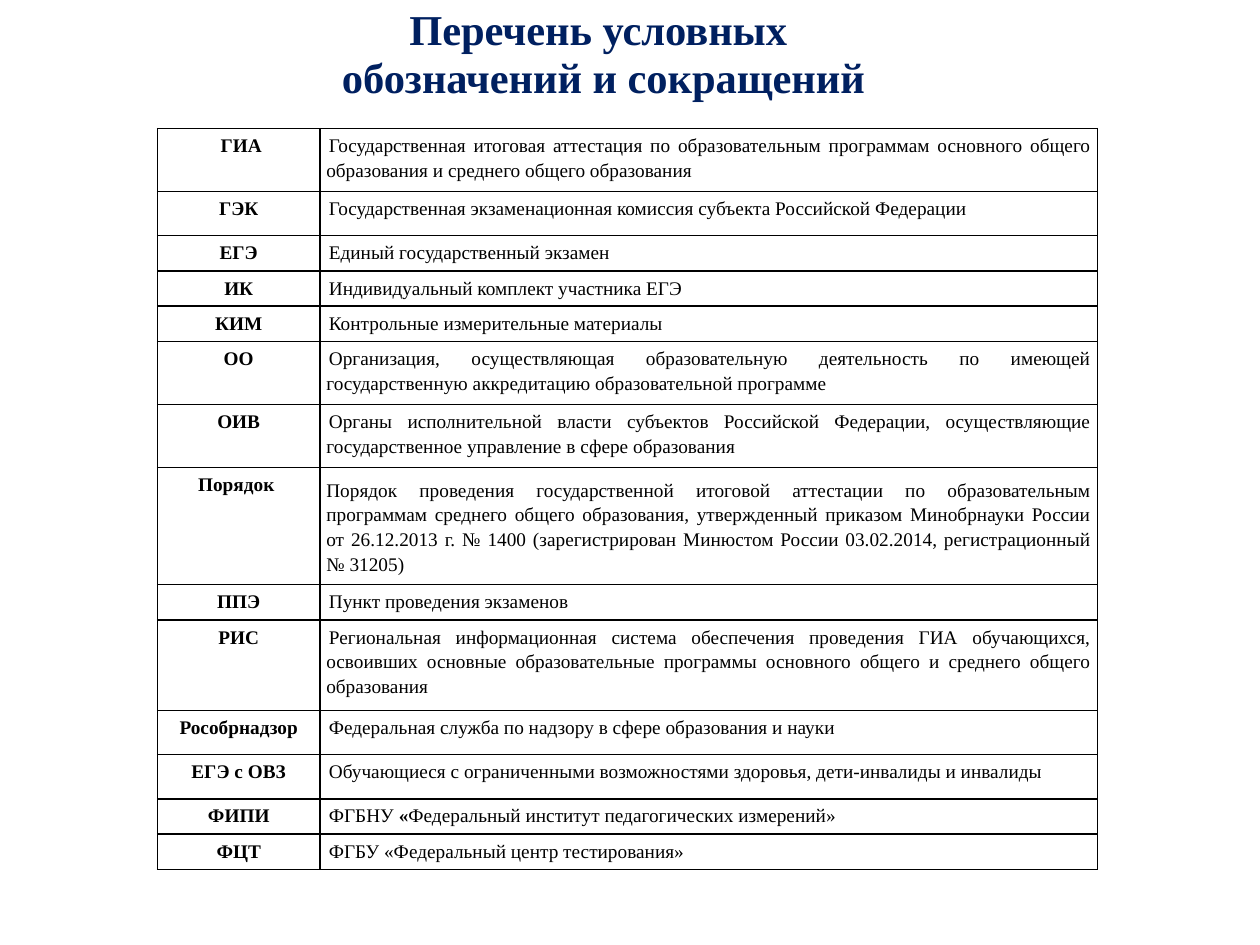
import pptx
import pptx.util
import pptx.dml.color
import pptx.enum.text
import pptx.oxml
import pptx.oxml.ns
from pptx.util import Inches

COLORS = {"title": "002060", "text": "000000", "border": "000000", "cell": "FFFFFF"}
ALIGN = pptx.enum.text.PP_ALIGN
ANCHOR = pptx.enum.text.MSO_ANCHOR


def add_text(p, text, size=11, bold=False, color="text", align=ALIGN.LEFT, spacing=1.15):
    p.alignment = align
    p.line_spacing = spacing
    r = p.add_run()
    r.text = text
    r.font.name = "Times New Roman"
    r.font.size = pptx.util.Pt(size)
    r.font.bold = bold
    r.font.color.rgb = pptx.dml.color.RGBColor.from_string(COLORS[color])


prs = pptx.Presentation()
prs.slide_width, prs.slide_height = Inches(10), Inches(7.5)
s = prs.slides.add_slide(prs.slide_layouts[5])

# Title
title = s.shapes.title
title.left, title.top, title.width, title.height = map(Inches, (0.48, 0.51, 8.62, 0.51))
tf = title.text_frame
tf.word_wrap = True
tf.auto_size = pptx.enum.text.MSO_AUTO_SIZE.NONE
tf.vertical_anchor = ANCHOR.BOTTOM
tf.margin_top, tf.margin_bottom = 0, Inches(0.2)
p = tf.paragraphs[0]
style = dict(size=24.3, bold=True, color="title", align=ALIGN.CENTER, spacing=0.94)
add_text(p, "Перечень условных ", **style)
p.add_line_break()
add_text(p, "обозначений и сокращений", **style)

# Abbreviations: row height, term, meaning as (text, bold) runs or a plain string
rows = [
    (0.5, " ГИА", "Государственная итоговая аттестация по образовательным программам "
     "основного общего образования и среднего общего образования"),
    (0.35, "ГЭК", "Государственная экзаменационная комиссия субъекта Российской Федерации"),
    (0.28, "ЕГЭ", "Единый государственный экзамен"),
    (0.28, "ИК", "Индивидуальный комплект участника ЕГЭ"),
    (0.28, "КИМ", "Контрольные измерительные материалы"),
    (0.5, "ОО", "Организация, осуществляющая образовательную деятельность по имеющей "
     "государственную аккредитацию образовательной программе"),
    (0.5, "ОИВ", "Органы исполнительной власти субъектов Российской Федерации, "
     "осуществляющие государственное управление в сфере образования"),
    (0.93, "Порядок ", "Порядок проведения государственной итоговой аттестации "
     "по образовательным программам среднего общего образования, утвержденный приказом "
     "Минобрнауки России от 26.12.2013 г. № 1400 (зарегистрирован Минюстом России "
     "03.02.2014, регистрационный № 31205)"),
    (0.28, "ППЭ", "Пункт проведения экзаменов"),
    (0.72, "РИС", "Региональная информационная система обеспечения проведения ГИА "
     "обучающихся, освоивших основные образовательные программы основного общего "
     "и среднего общего образования"),
    (0.35, "Рособрнадзор", "Федеральная служба по надзору в сфере образования и науки"),
    (0.35, "ЕГЭ с ОВЗ", "Обучающиеся с ограниченными возможностями здоровья, "
     "дети-инвалиды и инвалиды"),
    (0.28, "ФИПИ", [("ФГБНУ", False), (" «", True),
                    ("Федеральный институт педагогических измерений»", False)]),
    (0.28, "ФЦТ", "ФГБУ «Федеральный центр тестирования»"),
]

# Table
table = s.shapes.add_table(len(rows), 2, Inches(1.25), Inches(1.02),
                           Inches(7.46), Inches(5.85)).table
table.first_row = table.horz_banding = False
for column, width in zip(table.columns, (1.29, 6.17)):
    column.width = Inches(width)

for i, (height, term, meaning) in enumerate(rows):
    table.rows[i].height = Inches(height)
    term_cell, meaning_cell = table.cell(i, 0), table.cell(i, 1)
    for cell in (term_cell, meaning_cell):
        cell.margin_left = cell.margin_right = Inches(0.05)
        cell.margin_top = cell.margin_bottom = Inches(0.03)
        tcPr = cell._tc.get_or_add_tcPr()
        for side in ("lnL", "lnR", "lnT", "lnB"):
            tcPr.append(pptx.oxml.parse_xml(
                f'<a:{side} {pptx.oxml.ns.nsdecls("a")} w="12700"><a:solidFill>'
                f'<a:srgbClr val="{COLORS["border"]}"/></a:solidFill></a:{side}>'))
        cell.fill.solid()
        cell.fill.fore_color.rgb = pptx.dml.color.RGBColor.from_string(COLORS["cell"])

    add_text(term_cell.text_frame.paragraphs[0], term, bold=True, align=ALIGN.CENTER)
    p = meaning_cell.text_frame.paragraphs[0]
    runs = [(meaning, False)] if isinstance(meaning, str) else meaning
    for text, bold in runs:
        add_text(p, text, bold=bold, align=ALIGN.JUSTIFY)
    if term == "Порядок ":
        meaning_cell.vertical_anchor = ANCHOR.MIDDLE
    else:
        p._p.get_or_add_pPr().set("indent", str(Inches(0.02)))

prs.save("out.pptx")
